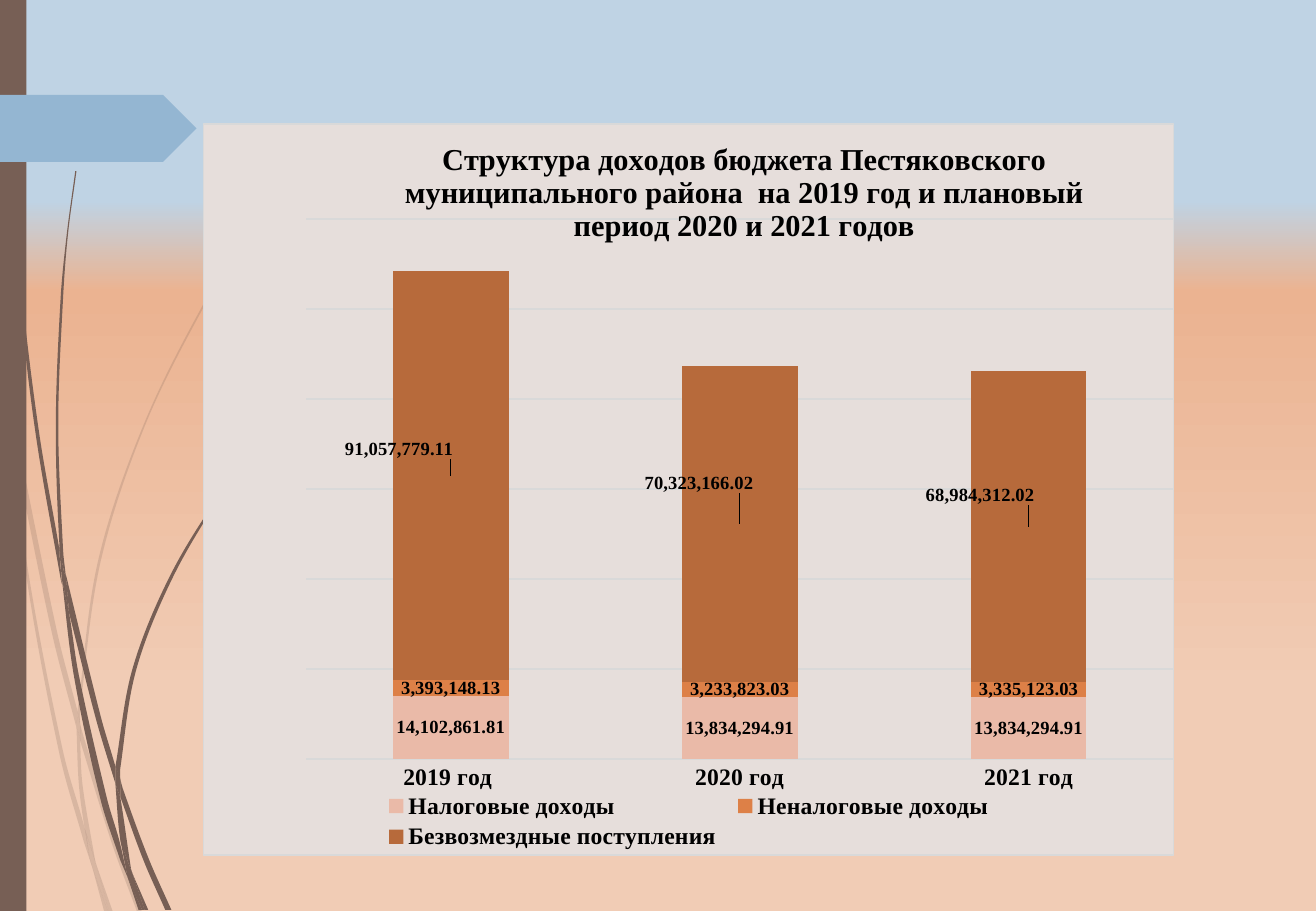
from math import dist

from lxml import etree
from pptx import Presentation
from pptx import util as u
from pptx.chart.data import CategoryChartData
from pptx.dml.color import RGBColor
from pptx.enum import chart as ch
from pptx.enum import shapes
from pptx.oxml import parse_xml
from pptx.oxml.ns import nsdecls, qn

Pt = u.Pt
BROWN = RGBColor(0x77, 0x5F, 0x55)
BLUE = RGBColor(0x94, 0xB6, 0xD2)
BLACK = RGBColor(0, 0, 0)
PANEL = RGBColor(0xE6, 0xDE, 0xDB)
GRID = RGBColor(0xD9, 0xD9, 0xD9)
SKY = [(22, RGBColor(0xBF, 0xD3, 0xE4)), (32, RGBColor(0xEB, 0xB3, 0x91)),
       (76, RGBColor(0xF1, 0xCC, 0xB5))]
SERIF = "Times New Roman"
FMT = "#,##0.00"
TITLE = ("Структура доходов бюджета Пестяковского муниципального района  "
         "на 2019 год и плановый период 2020 и 2021 годов")
YEARS = ["2019 год ", "2020 год", "2021 год"]
INCOME = [
    ("Налоговые доходы", RGBColor(0xEA, 0xBA, 0xA8),
     (14102861.81, 13834294.91, 13834294.91)),
    ("Неналоговые доходы", RGBColor(0xDD, 0x80, 0x47),
     (3393148.13, 3233823.03, 3335123.03)),
    ("Безвозмездные поступления ", RGBColor(0xB7, 0x6A, 0x3B),
     (91057779.11, 70323166.02, 68984312.02)),
]
LABEL_SHIFTS = [(-0.053, -0.036), (-0.042, -0.056), (-0.05, -0.043)]
GRASS_UNIT = 0.72
PALE_BLADES = [
    ([(0, 282), (6, 322), (8, 350)], [(8, 344), (0, 299)]),
    ([(11, 345), (47, 520), (64, 586)], [(63, 599), (43, 522), (13, 376)]),
    ([(66, 596), (69, 607), (96, 692), (117, 751)], [(113, 751), (92, 694), (66, 610)]),
    ([(79, 711), (93, 751)], [(90, 751), (79, 711)]),
    ([(8, 350), (13, 376), (23, 469), (52, 619), (70, 683), (74, 707), (76, 714)],
     [(69, 693), (49, 621), (21, 470), (8, 350)]),
    ([(63, 599), (66, 608), (66, 610), (68, 646), (78, 706), (79, 711)],
     [(73, 692), (70, 683), (65, 646), (63, 599)]),
    ([(235, 153), (218, 175), (202, 197), (171, 244), (119, 348), (81, 461), (64, 584), (64, 586)],
     [(66, 596), (66, 584), (83, 462), (120, 349), (172, 245), (202, 198), (218, 175), (235, 154)]),
    ([(76, 714), (89, 751)], [(86, 751), (76, 714)]),
    ([(64, 586), (66, 596), (66, 610)], [(66, 608), (63, 599)]),
    ([(70, 683), (73, 692), (79, 711), (90, 751)], [(89, 751), (76, 714), (74, 707), (70, 683)]),
]
DARK_BLADES = [
    ([(2, 0), (3, 48), (6, 110), (15, 233), (29, 355), (50, 477), (51, 481)],
     [(49, 457), (49, 453), (32, 355), (17, 232), (7, 109), (4, 48), (3, 0)]),
    ([(54, 472), (83, 590), (95, 631), (95, 633)], [(95, 645), (79, 592), (57, 505)]),
    ([(99, 641), (101, 649), (122, 706), (141, 749)], [(136, 749), (118, 708), (99, 656)]),
    ([(51, 477), (57, 505), (65, 556), (88, 657), (98, 691), (104, 717), (105, 722)],
     [(99, 708), (83, 659), (61, 557), (51, 477)]),
    ([(62, 141), (55, 193), (50, 245), (46, 349), (49, 449), (53, 472)],
     [(54, 472), (52, 453), (48, 349), (52, 245), (56, 193), (63, 141)]),
    ([(109, 719), (122, 749)], [(119, 749), (109, 719)]),
    ([(49, 449), (53, 472), (54, 472), (57, 505)], [(51, 477), (49, 453), (49, 449)]),
    ([(233, 344), (220, 358), (207, 373), (182, 405), (140, 474), (109, 551), (95, 631)],
     [(99, 641), (99, 633), (112, 552), (142, 476), (183, 406), (207, 374), (220, 359), (234, 344)]),
    ([(105, 722), (117, 749)], [(114, 749), (105, 722)]),
    ([(95, 645), (97, 651), (99, 656), (108, 716), (109, 719)], [(104, 706), (99, 691), (95, 645)]),
    ([(95, 631), (99, 641), (99, 656)], [(97, 651), (95, 645)]),
    ([(99, 691), (104, 706), (109, 719), (119, 749)], [(117, 749), (105, 722), (104, 717), (99, 691)]),
]


def fill_solid(sp, color, alpha=None):
    """Give a shape a plain fill without line or shadow, optionally transparent."""
    sp.shadow.inherit = False
    sp.fill.solid()
    sp.fill.fore_color.rgb = color
    sp.line.fill.background()
    if alpha:
        clr = sp._element.spPr.find(".//" + qn("a:srgbClr"))
        etree.SubElement(clr, qn("a:alpha")).set("val", str(alpha * 1000))


def curve(pts):
    """Return the control and end points of smooth cubics through the points."""
    slopes = []
    for i in range(len(pts)):
        run = pts[max(i - 1, 0):i + 2]
        length = sum(dist(a, b) for a, b in zip(run, run[1:]))
        slopes.append([(b - a) / length for a, b in zip(run[0], run[-1])])
    out = []
    for a, b, m, n in zip(pts, pts[1:], slopes, slopes[1:]):
        third = dist(a, b) / 3
        out += [tuple(p + k * third for p, k in zip(a, m)),
                tuple(p - k * third for p, k in zip(b, n)), b]
    return out


def add_blade(grp, down, up, alpha):
    """Draw one piece of grass from its two curved edges."""
    outline = [down[0]] + curve(down)
    for edge in ([down[-1], up[0]], up, [up[-1], down[0]]):
        if edge[0] != edge[-1]:
            outline += curve(edge)
    pts = [(round(x * GRASS_UNIT * 100), round(y * GRASS_UNIT * 100)) for x, y in outline]
    fb = grp.shapes.build_freeform(*pts[0], scale=Pt(0.01))
    fb.add_line_segments(pts[1:], close=False)
    sp = fb.convert_to_shape()
    route = sp._element.find(".//" + qn("a:pathLst"))[0]
    lines = route.findall(qn("a:lnTo"))
    for i in range(0, len(lines), 3):
        cubic = etree.SubElement(route, qn("a:cubicBezTo"))
        for ln in lines[i:i + 3]:
            cubic.append(ln[0])
            route.remove(ln)
    etree.SubElement(route, qn("a:close"))
    fill_solid(sp, BROWN, alpha)


def add_backdrop(s, height):
    """Draw the gradient, the grass, the side band and the arrow tag."""
    fill = s.background.fill
    fill.gradient()
    fill.gradient_angle = 270
    stops = s._element.find(".//" + qn("a:gsLst"))
    for gs in list(stops):
        stops.remove(gs)
    for pos, color in SKY:
        gs = etree.SubElement(stops, qn("a:gs"), pos=str(pos * 1000))
        etree.SubElement(gs, qn("a:srgbClr"), val=str(color))
    for blades, alpha in ((PALE_BLADES, 20), (DARK_BLADES, None)):
        grp = s.shapes.add_group_shape()
        for down, up in blades:
            add_blade(grp, down, up, alpha)
    for kind, y, w, h, color in (
            (shapes.MSO_SHAPE.RECTANGLE, 0, 15.7, height, BROWN),
            (shapes.MSO_SHAPE.PENTAGON, 56.2, 116.5, 39.8, BLUE)):
        fill_solid(s.shapes.add_shape(kind, 0, Pt(y), Pt(w), Pt(h)), color)


def set_font(font, size, name=SERIF, bold=True):
    """Set size, face, weight and black colour of a font."""
    font.size, font.name, font.bold = Pt(size), name, bold
    font.color.rgb = BLACK


def place(el, index, x, y, w=None, h=None, inner=False, edge=True):
    """Give a chart part a manual layout in fractions of the chart."""
    for old in el.findall(qn("c:layout")):
        el.remove(old)
    rows = [("layoutTarget", "inner")] if inner else []
    rows += [("xMode", "edge"), ("yMode", "edge")] if edge else []
    rows += [("x", x), ("y", y)] + ([("w", w), ("h", h)] if w else [])
    body = "".join(f'<c:{k} val="{v}"/>' for k, v in rows)
    el.insert(index, parse_xml(f'<c:layout {nsdecls("c")}><c:manualLayout>{body}'
                               '</c:manualLayout></c:layout>'))


def style_series(ser, color, shifts):
    """Colour a series and place its value labels."""
    ser.format.fill.solid()
    ser.format.fill.fore_color.rgb = color
    dl = ser.data_labels
    dl.show_value = True
    dl.number_format, dl.number_format_is_linked = FMT, False
    set_font(dl.font, 11)
    for i, (dx, dy) in enumerate(shifts):
        label = ser.points[i].data_label
        set_font(label.font, 11)
        label.position = ch.XL_LABEL_POSITION.CENTER
        el = ser._element.findall(".//" + qn("c:dLbl"))[i]
        place(el, 1, dx, dy, edge=False)
        el.insert(2, parse_xml(f'<c:numFmt {nsdecls("c")} formatCode="{FMT}" sourceLinked="0"/>'))
    labels = ser._element.find(qn("c:dLbls"))
    for leader in labels.findall(qn("c:showLeaderLines")):
        labels.remove(leader)
    labels.append(parse_xml(
        f'<c:extLst {nsdecls("c")}><c:ext uri="{{CE6537A1-D6FC-4f65-9D91-7224C49458BB}}" '
        'xmlns:c15="http://schemas.microsoft.com/office/drawing/2012/chart">'
        '<c15:showLeaderLines val="0"/></c:ext></c:extLst>'))


def add_income_chart(s, x, y, w, h):
    """Draw the stacked income chart on its panel."""
    data = CategoryChartData(number_format=FMT)
    data.categories = YEARS
    for name, _, vals in INCOME:
        data.add_series(name, vals)
    chart = s.shapes.add_chart(ch.XL_CHART_TYPE.COLUMN_STACKED, Pt(x), Pt(y),
                               Pt(w), Pt(h), data).chart
    set_font(chart.font, 10, "Quicksand", False)
    space = chart.element
    space.find(qn("c:chart")).addnext(parse_xml(
        f'<c:spPr {nsdecls("c", "a")}><a:solidFill><a:srgbClr val="{PANEL}"/></a:solidFill>'
        f'<a:ln w="{Pt(0.75)}"><a:solidFill><a:srgbClr val="{GRID}"/></a:solidFill></a:ln></c:spPr>'))

    title = chart.chart_title
    title.text_frame.text = TITLE
    set_font(title.text_frame.paragraphs[0].runs[0].font, 18)
    title.include_in_layout = True
    place(title._element, 1, 0.202, 0.015)

    plot = chart.plots[0]
    plot.gap_width, plot.overlap, plot.vary_by_categories = 150, 100, False
    place(space.find(".//" + qn("c:plotArea")), 0, 0.106, 0.13, 0.894, 0.739, inner=True)
    for i, (ser, (_, color, _)) in enumerate(zip(plot.series, INCOME)):
        style_series(ser, color, LABEL_SHIFTS if i == 2 else [])

    cat, val = chart.category_axis, chart.value_axis
    cat.major_tick_mark = ch.XL_TICK_MARK.NONE
    cat.format.line.fill.background()
    set_font(cat.tick_labels.font, 14)
    val.visible = False
    val.minimum_scale, val.maximum_scale, val.major_unit = 0, 120e6, 20e6
    val.major_gridlines.format.line.color.rgb = GRID
    val.major_gridlines.format.line.width = Pt(0.75)

    chart.has_legend = True
    legend = chart.legend
    legend.position = ch.XL_LEGEND_POSITION.BOTTOM
    legend.include_in_layout = False
    set_font(legend.font, 14)
    place(legend._element, 1, 0.183, 0.909, 0.635, 0.09)


def main():
    """Build the income slide."""
    prs = Presentation()
    prs.slide_width, prs.slide_height = Pt(780), Pt(540)
    s = prs.slides.add_slide(prs.slide_layouts[6])
    add_backdrop(s, 540)
    add_income_chart(s, 120.3, 73.2, 575.5, 434)
    prs.save("out.pptx")


if __name__ == "__main__":
    main()
